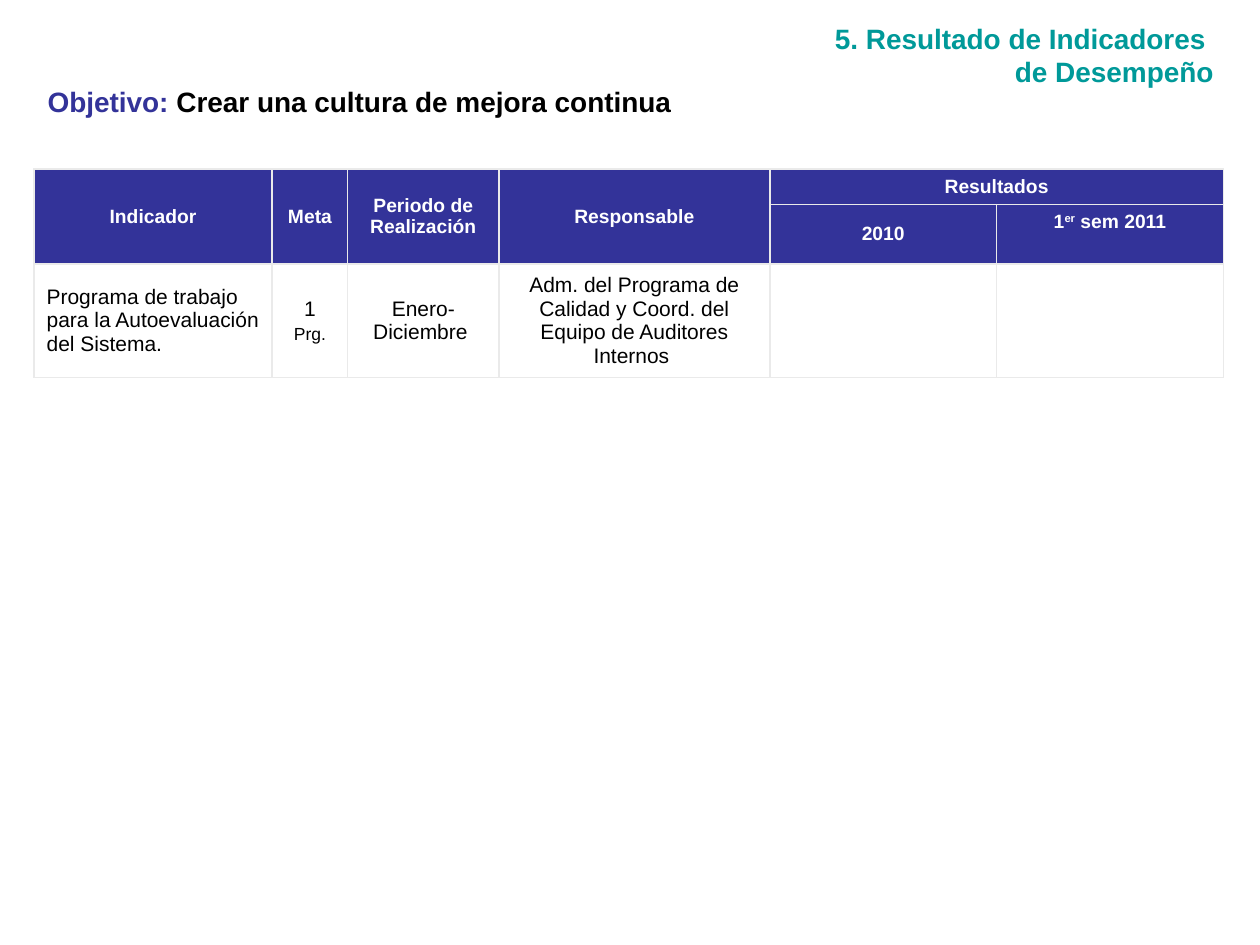
from lxml import etree
from pptx import Presentation
from pptx.dml.color import RGBColor
from pptx.enum.text import MSO_ANCHOR, PP_ALIGN
from pptx.oxml.ns import qn
from pptx.util import Inches, Pt

LEFT, CENTER, RIGHT = PP_ALIGN.LEFT, PP_ALIGN.CENTER, PP_ALIGN.RIGHT
TOP, MIDDLE = MSO_ANCHOR.TOP, MSO_ANCHOR.MIDDLE
FONT = "Arial"
BLUE, TEAL, BLACK, WHITE, GRID = "333399", "009999", "000000", "FFFFFF", "EAEAEA"
COLUMN_WIDTHS = [1.89, 0.6, 1.2, 2.15, 1.8, 1.8]
ROW_HEIGHTS = [0.28, 0.47, 0.9]
HEADERS = ["Indicador", "Meta", "Periodo de Realización", "Responsable"]


def rgb(color):
    return RGBColor.from_string(color)


def add_text(paragraph, text, size=16, color=BLACK, bold=False, baseline=None):
    run = paragraph.add_run()
    run.text = text
    font = run.font
    font.name, font.size, font.bold = FONT, Pt(size), bold
    font.color.rgb = rgb(color)
    if baseline:
        font._element.set("baseline", str(baseline * 1000))


def add_text_box(slide, left, top, width, height, wrap=True):
    shape = slide.shapes.add_textbox(
        Inches(left), Inches(top), Inches(width), Inches(height))
    shape.text_frame.word_wrap = wrap
    return shape.text_frame


def add_heading(slide):
    frame = add_text_box(slide, 4.69, 0.12, 5.04, 0.64)
    for paragraph, line in (
        (frame.paragraphs[0], "5. Resultado de Indicadores "),
        (frame.add_paragraph(), "de Desempeño"),
    ):
        paragraph.alignment = RIGHT
        add_text(paragraph, line, color=TEAL, bold=True)


def add_objective(slide):
    frame = add_text_box(slide, 0.28, 0.62, 5.22, 0.69, wrap=False)
    paragraph = frame.paragraphs[0]
    add_text(paragraph, "Objetivo: ", color=BLUE, bold=True)
    add_text(paragraph, "Crear una cultura de mejora continua", bold=True)


def set_borders(cell, color):
    properties = cell._tc.get_or_add_tcPr()
    for side in ("a:lnL", "a:lnR", "a:lnT", "a:lnB"):
        line = etree.SubElement(properties, qn(side), w=str(Pt(1)))
        fill = etree.SubElement(line, qn("a:solidFill"))
        etree.SubElement(fill, qn("a:srgbClr"), val=color)


def style_cell(cell, header):
    set_borders(cell, GRID)
    if header:
        cell.fill.solid()
        cell.fill.fore_color.rgb = rgb(BLUE)
    else:
        cell.fill.background()


def fill_cell(cell, text, alignment=CENTER, **text_format):
    cell.vertical_anchor = MIDDLE
    paragraph = cell.text_frame.paragraphs[0]
    paragraph.alignment = alignment
    add_text(paragraph, text, **text_format)
    return paragraph


def add_indicator_table(slide):
    table = slide.shapes.add_table(
        len(ROW_HEIGHTS), len(COLUMN_WIDTHS), Inches(0.27), Inches(1.34),
        Inches(sum(COLUMN_WIDTHS)), Inches(sum(ROW_HEIGHTS))).table
    table.first_row = table.horz_banding = False
    for column, width in zip(table.columns, COLUMN_WIDTHS):
        column.width = Inches(width)
    for index, (row, height) in enumerate(zip(table.rows, ROW_HEIGHTS)):
        row.height = Inches(height)
        for cell in row.cells:
            style_cell(cell, header=index < 2)

    header_format = {"size": 11, "color": WHITE, "bold": True}
    for column, title in enumerate(HEADERS):
        table.cell(0, column).merge(table.cell(1, column))
        fill_cell(table.cell(0, column), title, **header_format)
    table.cell(0, 4).merge(table.cell(0, 5))
    fill_cell(table.cell(0, 4), "Resultados", **header_format)
    fill_cell(table.cell(1, 4), "2010", **header_format)
    semester = table.cell(1, 5)
    paragraph = fill_cell(semester, "1", **header_format)
    add_text(paragraph, "er", baseline=30, **header_format)
    add_text(paragraph, " sem 2011", **header_format)
    semester.vertical_anchor = TOP

    fill_cell(table.cell(2, 0),
              "Programa de trabajo para la Autoevaluación del Sistema.",
              alignment=LEFT, size=12)
    goal = table.cell(2, 1)
    fill_cell(goal, "1", size=12)
    unit = goal.text_frame.add_paragraph()
    unit.alignment = CENTER
    unit.space_before = Pt(2)
    add_text(unit, "Prg.", size=10)
    fill_cell(table.cell(2, 2), "Enero- Diciembre ", size=12)
    fill_cell(table.cell(2, 3),
              "Adm. del Programa de Calidad y Coord. del Equipo de Auditores Internos ",
              size=12)


def main():
    presentation = Presentation()
    presentation.slide_width, presentation.slide_height = Inches(10), Inches(7.5)
    slide = presentation.slides.add_slide(presentation.slide_layouts[6])
    add_heading(slide)
    add_objective(slide)
    add_indicator_table(slide)
    presentation.save("out.pptx")


if __name__ == "__main__":
    main()
